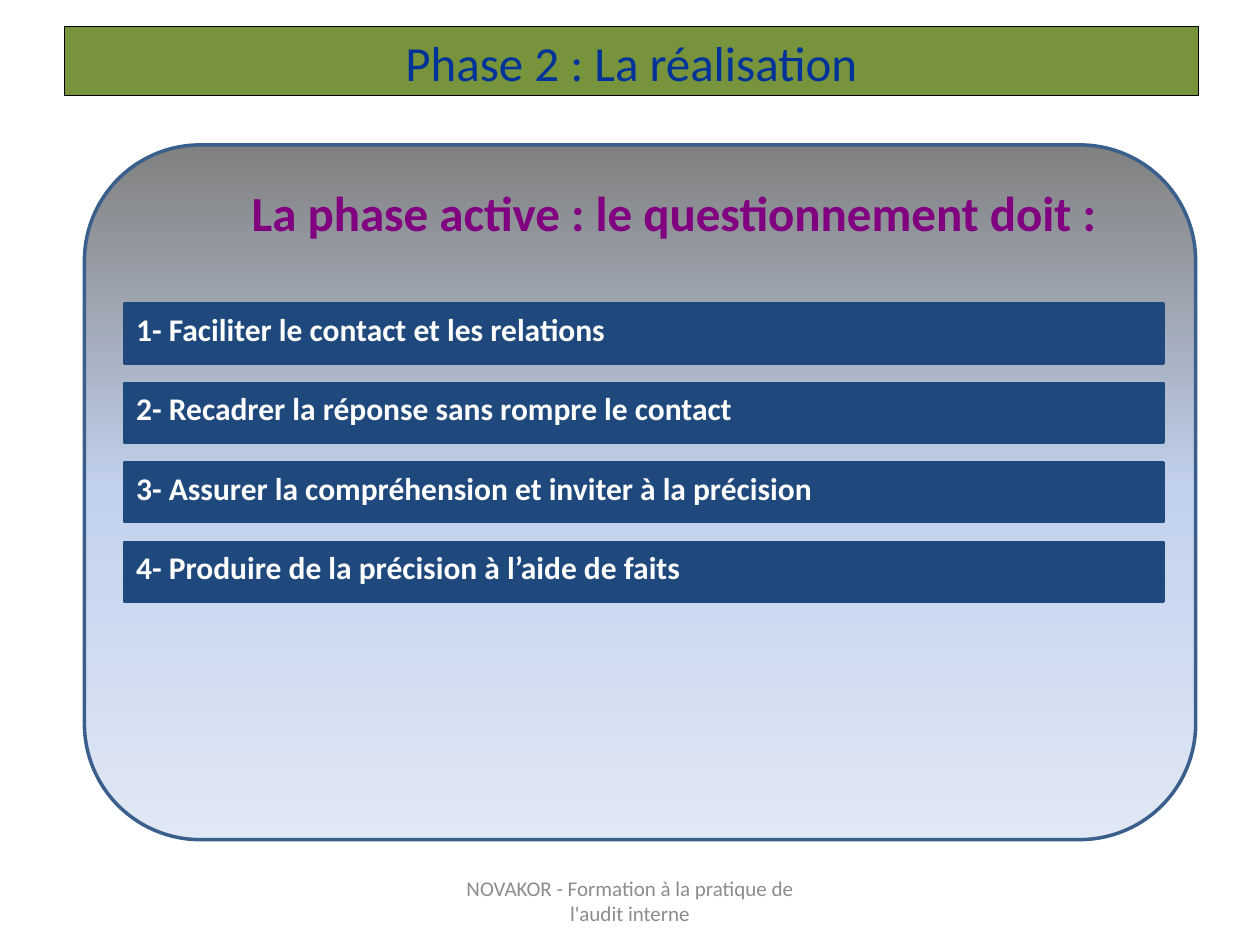
"""Build the slide on the questioning rules of the audit's second phase."""
import copy

import pptx
import pptx.dml.color
import pptx.enum.shapes
import pptx.enum.text
import pptx.oxml.ns
import pptx.util

Pt = pptx.util.Pt
SHAPES = pptx.enum.shapes.MSO_SHAPE
ANCHOR = pptx.enum.text.MSO_ANCHOR
ALIGN = pptx.enum.text.PP_ALIGN

TITLE = "Phase 2 : La réalisation"
HEADING = "La phase active : le questionnement doit :"
RULES = [
    "Faciliter le contact et les relations",
    "Recadrer la réponse sans rompre le contact",
    "Assurer la compréhension et inviter à la précision",
    "Produire de la précision à l’aide de faits",
]
FOOTER = "NOVAKOR - Formation à la pratique de l'audit interne"

THEME = {
    "font": "Calibri",
    "title": {"size": 28, "color": "003399", "bold": False},
    "heading": {"size": 28, "color": "800080", "bold": True},
    "rule": {"size": 18, "color": "FFFFFF", "bold": True},
    "footer": {"size": 12, "color": "8C8C8C", "bold": False},
    "banner_fill": "77933C",
    "banner_line": "000000",
    "bar": "1F497D",
    "panel_line": "3A5F8C",
    "panel_stops": [(0, "808080"), (0.5, "C2D1ED"), (1, "E1E8F5")],
}

SLIDE_SIZE = (720, 540)
PANEL_BOX = (48.25, 82.8, 635, 397)
BANNER_BOX = (36.75, 15, 648, 39.75)
HEADING_BOX = (121.5, 106, 527, 34)
FOOTER_BOX = (246, 500.5, 228, 28.75)
BAR_BOX = (70.75, 173.6, 594, 34)
BAR_PITCH = 45.35
HANGING = 23


def rgb(value):
    return pptx.dml.color.RGBColor.from_string(value)


def add_block(slide, preset, box, line_color, line_width, fill=None):
    block = slide.shapes.add_shape(preset, *map(Pt, box))
    block.shadow.inherit = False
    block.line.color.rgb = rgb(line_color)
    block.line.width = Pt(line_width)
    if fill:
        block.fill.solid()
        block.fill.fore_color.rgb = rgb(fill)
    return block


def write(holder, wording, role, anchor, **layout):
    frame = holder.text_frame
    frame.word_wrap = True
    frame.vertical_anchor = anchor
    frame.text = wording
    paragraph = frame.paragraphs[0]
    for name, value in layout.items():
        setattr(paragraph, name, value)
    style = THEME[role]
    font = paragraph.runs[0].font
    formats = {"name": THEME["font"], "size": Pt(style["size"]), "bold": style["bold"]}
    for name, value in formats.items():
        setattr(font, name, value)
    font.color.rgb = rgb(style["color"])
    return paragraph


def shade(panel, stops):
    panel.fill.gradient()
    panel.fill.gradient_angle = 270
    stop_list = panel._element.spPr.find(".//" + pptx.oxml.ns.qn("a:gsLst"))
    while len(stop_list) < len(stops):
        stop_list.append(copy.deepcopy(stop_list[0]))
    for stop, (position, color) in zip(panel.fill.gradient_stops, stops):
        stop.position = position
        stop.color.rgb = rgb(color)


def main():
    deck = pptx.Presentation()
    deck.slide_width, deck.slide_height = map(Pt, SLIDE_SIZE)
    slide = deck.slides.add_slide(deck.slide_layouts[6])

    panel = add_block(slide, SHAPES.ROUNDED_RECTANGLE, PANEL_BOX, THEME["panel_line"], 2)
    shade(panel, THEME["panel_stops"])

    footer = slide.shapes.add_textbox(*map(Pt, FOOTER_BOX))
    write(footer, FOOTER, "footer", ANCHOR.MIDDLE, alignment=ALIGN.CENTER)

    banner = add_block(slide, SHAPES.RECTANGLE, BANNER_BOX,
                       THEME["banner_line"], 0.75, THEME["banner_fill"])
    write(banner, TITLE, "title", ANCHOR.TOP, alignment=ALIGN.CENTER)

    heading = slide.shapes.add_textbox(*map(Pt, HEADING_BOX))
    write(heading, HEADING, "heading", ANCHOR.MIDDLE,
          alignment=ALIGN.CENTER, line_spacing=0.9)

    left, top, width, height = BAR_BOX
    for index, rule in enumerate(RULES):
        bar = add_block(slide, SHAPES.RECTANGLE,
                        (left, top + index * BAR_PITCH, width, height),
                        THEME["bar"], 1.5, THEME["bar"])
        entry = write(bar, f"{index + 1}- {rule}", "rule", ANCHOR.TOP, alignment=ALIGN.LEFT)
        properties = entry._p.get_or_add_pPr()
        properties.set("marL", str(Pt(HANGING)))
        properties.set("indent", str(-Pt(HANGING)))

    deck.save("out.pptx")


if __name__ == "__main__":
    main()
